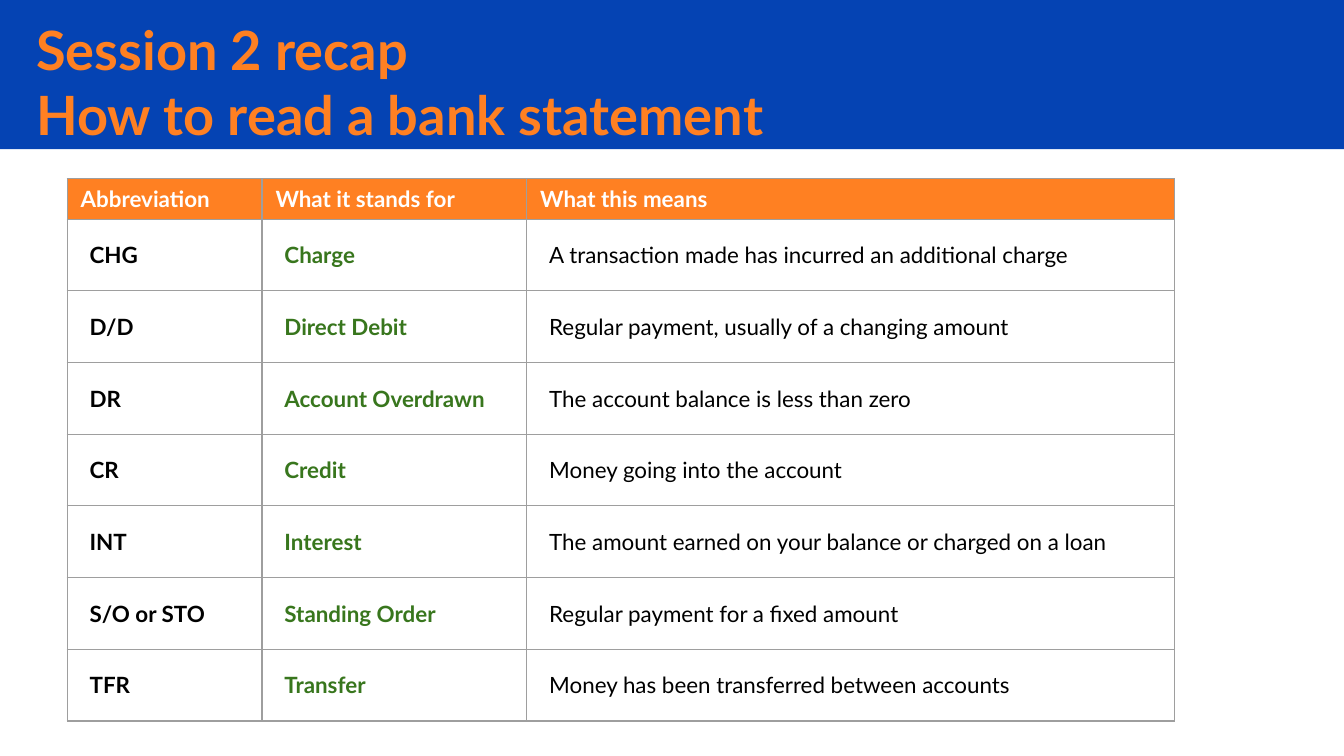
from typing import NamedTuple

from lxml import etree
from pptx import Presentation
from pptx.dml.color import RGBColor
from pptx.enum.shapes import MSO_SHAPE
from pptx.enum.text import MSO_ANCHOR, MSO_AUTO_SIZE, PP_ALIGN
from pptx.oxml.ns import qn
from pptx.util import Inches, Pt

RECTANGLE = MSO_SHAPE.RECTANGLE
TOP = MSO_ANCHOR.TOP
LEFT = PP_ALIGN.LEFT
NO_AUTOFIT = MSO_AUTO_SIZE.NONE

SLIDE_WIDTH = Inches(10)
SLIDE_HEIGHT = SLIDE_WIDTH * 9 // 16
TITLE_ONLY = 5
FONT = "Lato"
BLUE, ORANGE, GREEN = "0543B3", "FF8022", "38761D"
WHITE, BLACK, GREY = "FFFFFF", "000000", "9E9E9E"

COLUMN_WIDTHS = (Inches(1.45), Inches(1.97), Inches(4.82))
HEADER_HEIGHT, ENTRY_HEIGHT = Inches(0.3), Inches(0.53)
HEADER_MARGINS = (Inches(0.1), Inches(0.05))
ENTRY_MARGINS = (Pt(12), Pt(12))


class Entry(NamedTuple):
    abbreviation: str
    stands_for: str
    meaning: str


class CellStyle(NamedTuple):
    color: str
    bold: bool
    margins: tuple
    fill: str | None = None


HEADINGS = Entry("Abbreviation", "What it stands for", "What this means")
ENTRIES = (
    Entry("CHG", "Charge", "A transaction made has incurred an additional charge"),
    Entry("D/D", "Direct Debit", "Regular payment, usually of a changing amount"),
    Entry("DR", "Account Overdrawn", "The account balance is less than zero"),
    Entry("CR", "Credit", "Money going into the account"),
    Entry("INT", "Interest", "The amount earned on your balance or charged on a loan"),
    Entry("S/O or STO", "Standing Order", "Regular payment for a fixed amount"),
    Entry("TFR", "Transfer", "Money has been transferred between accounts"),
)
HEADER_STYLES = (CellStyle(WHITE, True, HEADER_MARGINS, ORANGE),) * 3
ENTRY_STYLES = (
    CellStyle(BLACK, True, ENTRY_MARGINS),
    CellStyle(GREEN, True, ENTRY_MARGINS),
    CellStyle(BLACK, False, ENTRY_MARGINS),
)


def paint(color_format, color: str) -> None:
    color_format.rgb = RGBColor.from_string(color)


def write(frame, text: str, *, size: float, color: str, bold: bool) -> None:
    frame.text = text
    for paragraph in frame.paragraphs:
        paragraph.alignment = LEFT
        for run in paragraph.runs:
            run.font.name = FONT
            run.font.size = Pt(size)
            run.font.bold = bold
            paint(run.font.color, color)


def add_borders(cell, color: str, width: float) -> None:
    properties = cell._tc.get_or_add_tcPr()
    for side in ("lnL", "lnR", "lnT", "lnB"):
        line = etree.SubElement(properties, qn(f"a:{side}"), w=str(Pt(width)))
        fill = etree.SubElement(line, qn("a:solidFill"))
        etree.SubElement(fill, qn("a:srgbClr"), val=color)


def fill_cell(cell, text: str, style: CellStyle) -> None:
    add_borders(cell, GREY, 0.75)
    if style.fill:
        cell.fill.solid()
        paint(cell.fill.fore_color, style.fill)
    else:
        cell.fill.background()
    cell.margin_left = cell.margin_right = style.margins[0]
    cell.margin_top = cell.margin_bottom = style.margins[1]
    write(cell.text_frame, text, size=12, color=style.color, bold=style.bold)


def add_heading(slide) -> None:
    title = slide.shapes.title
    band = slide.shapes.add_shape(RECTANGLE, 0, 0, SLIDE_WIDTH, Inches(1.11))
    band.shadow.inherit = False
    band.fill.solid()
    paint(band.fill.fore_color, BLUE)
    band.line.fill.background()
    title.element.addprevious(band.element)

    title.left, title.top = Inches(0.17), Inches(0.12)
    title.width, title.height = Inches(8.85), Inches(0.56)
    frame = title.text_frame
    frame.auto_size = NO_AUTOFIT
    frame.word_wrap = True
    frame.vertical_anchor = TOP
    frame.margin_left = frame.margin_right = Inches(0.1)
    frame.margin_top = frame.margin_bottom = 0
    write(frame, "Session 2 recap\nHow to read a bank statement",
          size=29, color=ORANGE, bold=True)


def add_glossary(slide) -> None:
    height = HEADER_HEIGHT + ENTRY_HEIGHT * len(ENTRIES)
    glossary = slide.shapes.add_table(
        len(ENTRIES) + 1, len(COLUMN_WIDTHS),
        Inches(0.5), Inches(1.33), sum(COLUMN_WIDTHS), height,
    ).table
    glossary.first_row = glossary.horz_banding = False
    for column, width in zip(glossary.columns, COLUMN_WIDTHS):
        column.width = width
    for index, entry in enumerate((HEADINGS, *ENTRIES)):
        glossary.rows[index].height = ENTRY_HEIGHT if index else HEADER_HEIGHT
        styles = ENTRY_STYLES if index else HEADER_STYLES
        for cell, text, style in zip(glossary.rows[index].cells, entry, styles):
            fill_cell(cell, text, style)


def main() -> None:
    presentation = Presentation()
    presentation.slide_width, presentation.slide_height = SLIDE_WIDTH, SLIDE_HEIGHT
    slide = presentation.slides.add_slide(presentation.slide_layouts[TITLE_ONLY])
    add_heading(slide)
    add_glossary(slide)
    presentation.save("out.pptx")


if __name__ == "__main__":
    main()
